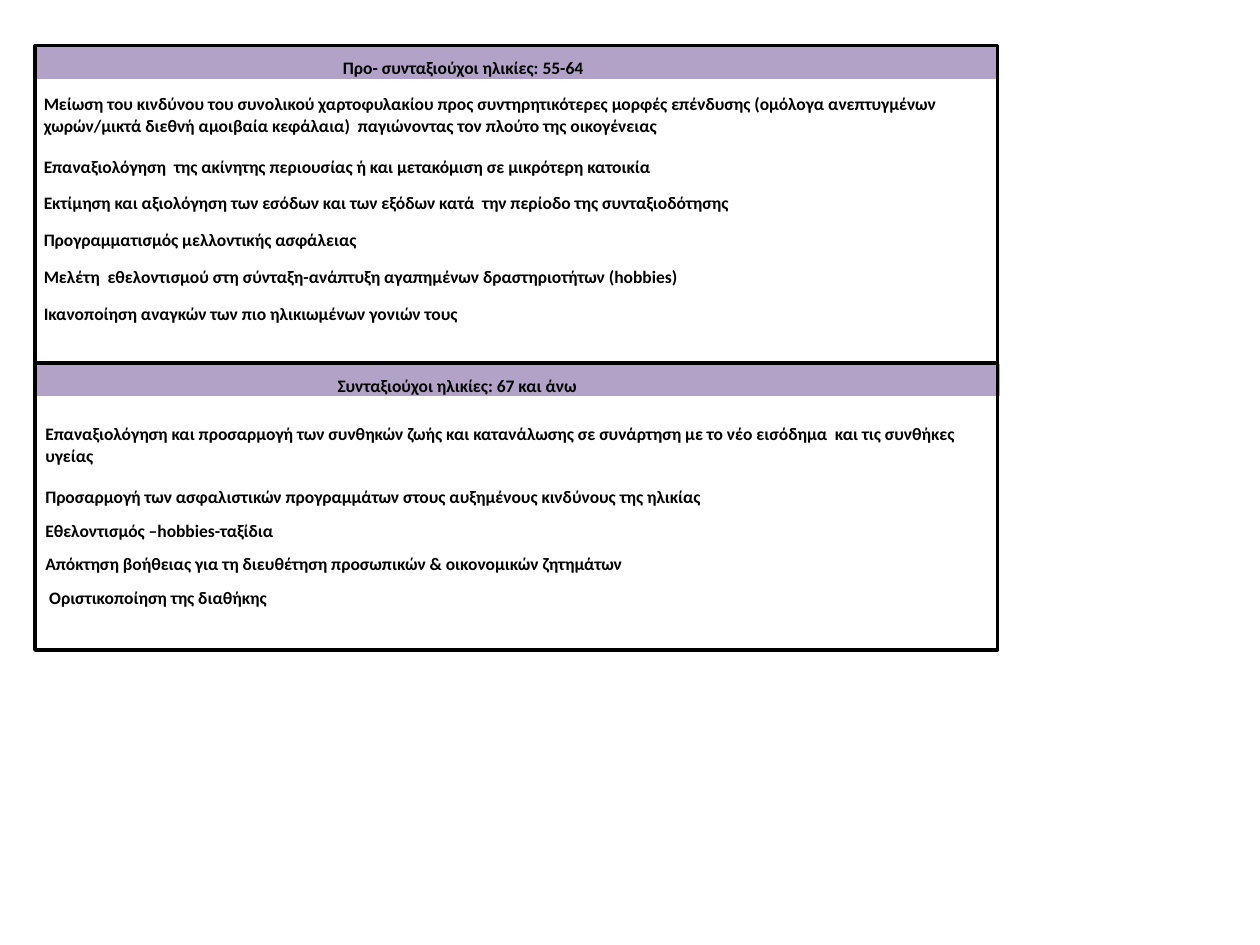
from dataclasses import dataclass

from pptx import Presentation
from pptx import util as u
from pptx.dml.color import RGBColor
from pptx.enum import shapes, text


@dataclass(frozen=True)
class Theme:
    font: str = "Calibri"
    size: float = 10
    line_spacing: float = 1.07
    ink: RGBColor = RGBColor(0, 0, 0)
    header: RGBColor = RGBColor(0xB3, 0xA2, 0xC7)
    body: RGBColor = RGBColor(0xFF, 0xFF, 0xFF)
    frame_width: float = 2
    inset: float = 5


@dataclass(frozen=True)
class Box:
    left: float
    top: float
    width: float
    height: float

    def lengths(self):
        return [u.Pt(v) for v in (self.left, self.top, self.width, self.height)]


@dataclass(frozen=True)
class AgeGroup:
    title: str
    title_indent: float
    advice: tuple
    row_heights: tuple
    anchor: text.MSO_ANCHOR
    filled: bool


THEME = Theme()

PRE_RETIREMENT = AgeGroup(
    title="Προ- συνταξιούχοι ηλικίες: 55-64",
    title_indent=171,
    advice=(
        "Μείωση του κινδύνου του συνολικού χαρτοφυλακίου προς συντηρητικότερες "
        "μορφές επένδυσης (ομόλογα ανεπτυγμένων χωρών/μικτά διεθνή αμοιβαία "
        "κεφάλαια)  παγιώνοντας τον πλούτο της οικογένειας",
        "Επαναξιολόγηση  της ακίνητης περιουσίας ή και μετακόμιση σε μικρότερη κατοικία",
        "Εκτίμηση και αξιολόγηση των εσόδων και των εξόδων κατά  την περίοδο της συνταξιοδότησης",
        "Προγραμματισμός μελλοντικής ασφάλειας",
        "Μελέτη  εθελοντισμού στη σύνταξη-ανάπτυξη αγαπημένων δραστηριοτήτων (hobbies)",
        "Ικανοποίηση αναγκών των πιο ηλικιωμένων γονιών τους",
    ),
    row_heights=(19.4, 40.3, 19.8) + (21.1,) * 4,
    anchor=text.MSO_ANCHOR.MIDDLE,
    filled=True,
)

RETIREMENT = AgeGroup(
    title="Συνταξιούχοι ηλικίες: 67 και άνω",
    title_indent=167,
    advice=(
        "Επαναξιολόγηση και προσαρμογή των συνθηκών ζωής και κατανάλωσης σε "
        "συνάρτηση με το νέο εισόδημα  και τις συνθήκες  υγείας",
        "Προσαρμογή των ασφαλιστικών προγραμμάτων στους αυξημένους κινδύνους της ηλικίας",
        "Εθελοντισμός –hobbies-ταξίδια",
        "Απόκτηση βοήθειας για τη διευθέτηση προσωπικών & οικονομικών ζητημάτων",
        "\u00a0Οριστικοποίηση της διαθήκης",
    ),
    row_heights=(19.4, 40.3, 23) + (19.4,) * 3,
    anchor=text.MSO_ANCHOR.BOTTOM,
    filled=False,
)


def write_cell(cell, words, anchor, indent=0):
    cell.margin_left = u.Pt(THEME.inset + indent)
    cell.margin_right = u.Pt(THEME.inset)
    cell.margin_top = cell.margin_bottom = 0
    cell.vertical_anchor = anchor
    para = cell.text_frame.paragraphs[0]
    para.text = words
    para.line_spacing = THEME.line_spacing
    para.font.name = THEME.font
    para.font.size = u.Pt(THEME.size)
    para.font.bold = True
    para.font.color.rgb = THEME.ink


def add_advice_table(page, group, box):
    """Header row and one row per piece of advice; white rules come from the style."""
    table = page.shapes.add_table(len(group.row_heights), 1, *box.lengths()).table
    table.horz_banding = False
    for row, height in zip(table.rows, group.row_heights):
        row.height = u.Pt(height)

    header = table.cell(0, 0)
    write_cell(header, group.title, text.MSO_ANCHOR.BOTTOM, group.title_indent)
    header.fill.solid()
    header.fill.fore_color.rgb = THEME.header

    for index, words in enumerate(group.advice, start=1):
        cell = table.cell(index, 0)
        write_cell(cell, words, group.anchor)
        if group.filled:
            cell.fill.solid()
            cell.fill.fore_color.rgb = THEME.body
        else:
            cell.fill.background()


def add_frame(page, box):
    frame = page.shapes.add_shape(shapes.MSO_SHAPE.RECTANGLE, *box.lengths())
    frame.shadow.inherit = False
    frame.fill.background()
    frame.line.color.rgb = THEME.ink
    frame.line.width = u.Pt(THEME.frame_width)


def add_age_group(page, group, box, table_shift=0):
    """Advice table at the top of a framed box."""
    table_box = Box(box.left + table_shift, box.top, 550.8, sum(group.row_heights))
    add_advice_table(page, group, table_box)
    add_frame(page, box)


def main():
    deck = Presentation()
    deck.slide_width, deck.slide_height = u.Pt(720), u.Pt(540)
    page = deck.slides.add_slide(deck.slide_layouts[6])

    # The two age groups share one edge
    upper = Box(20, 26, 550, 181.5)
    lower = Box(upper.left, upper.top + upper.height, upper.width, 164)
    add_age_group(page, PRE_RETIREMENT, upper)
    add_age_group(page, RETIREMENT, lower, table_shift=0.9)

    deck.save("out.pptx")


if __name__ == "__main__":
    main()
